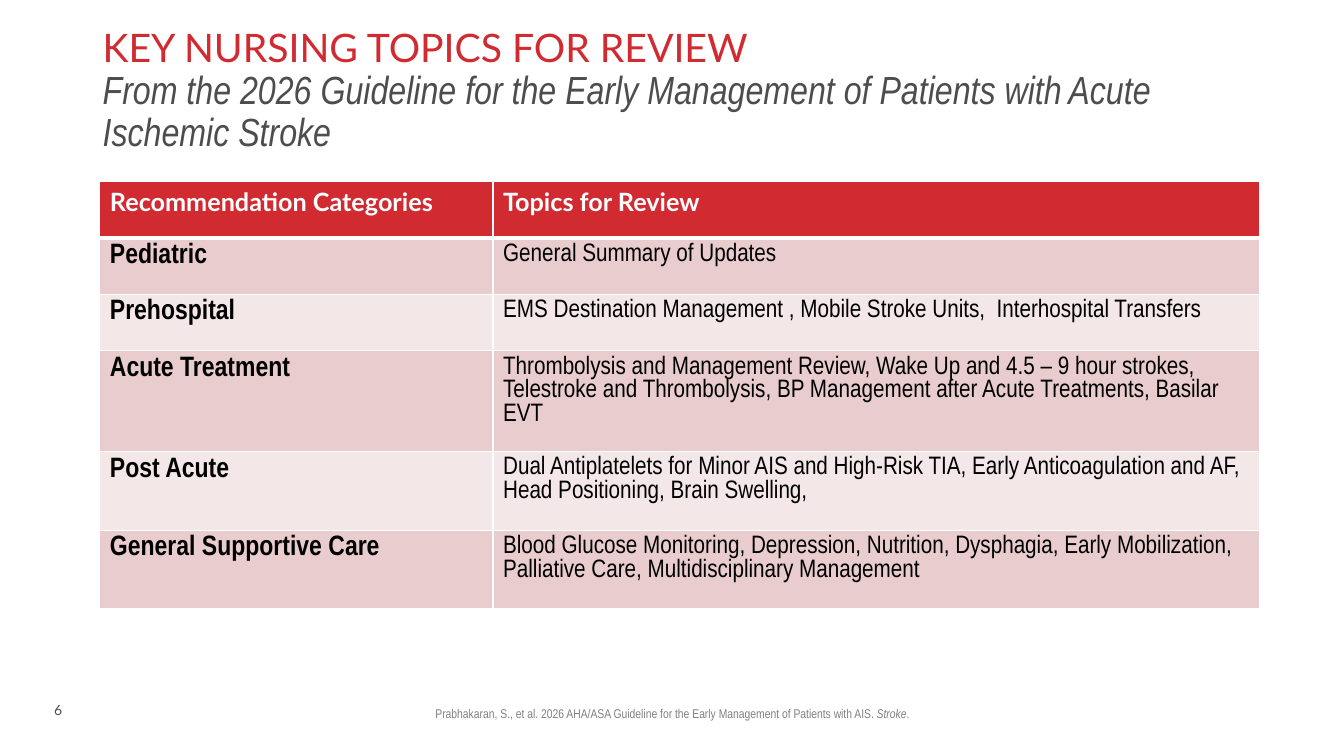
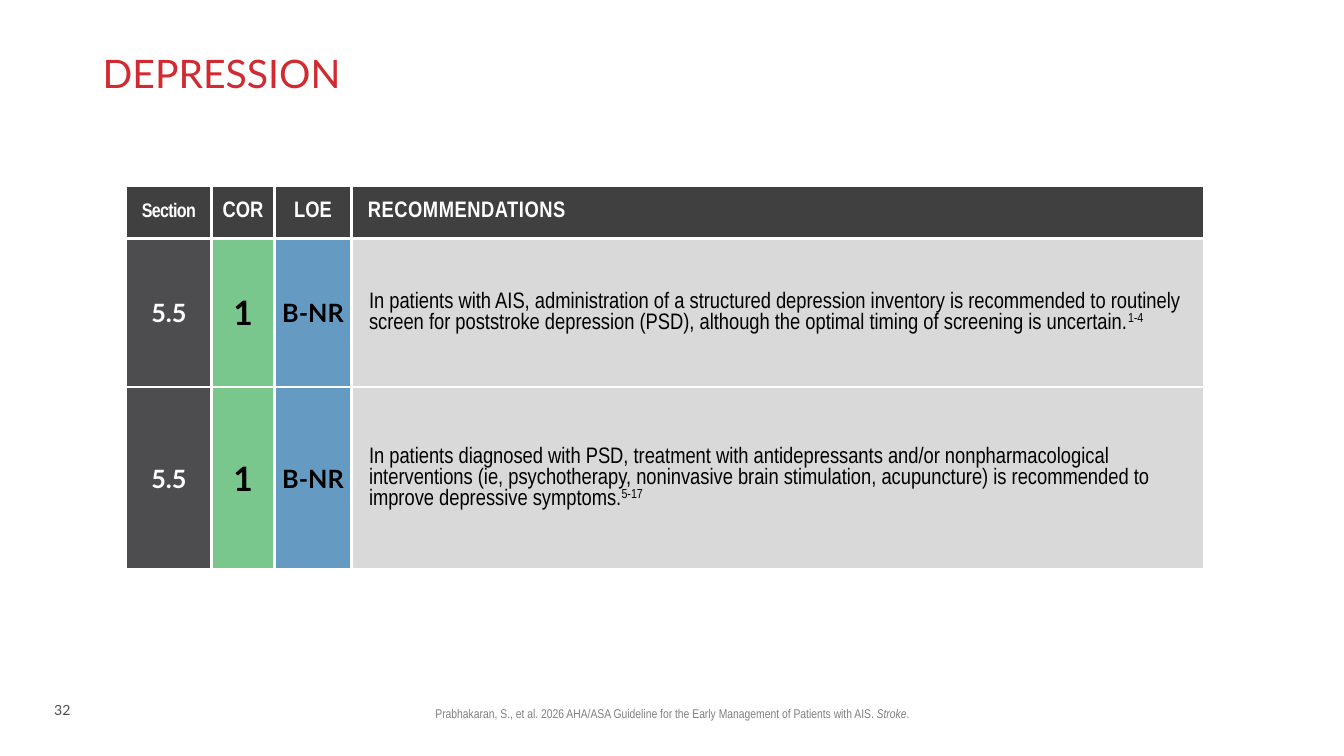
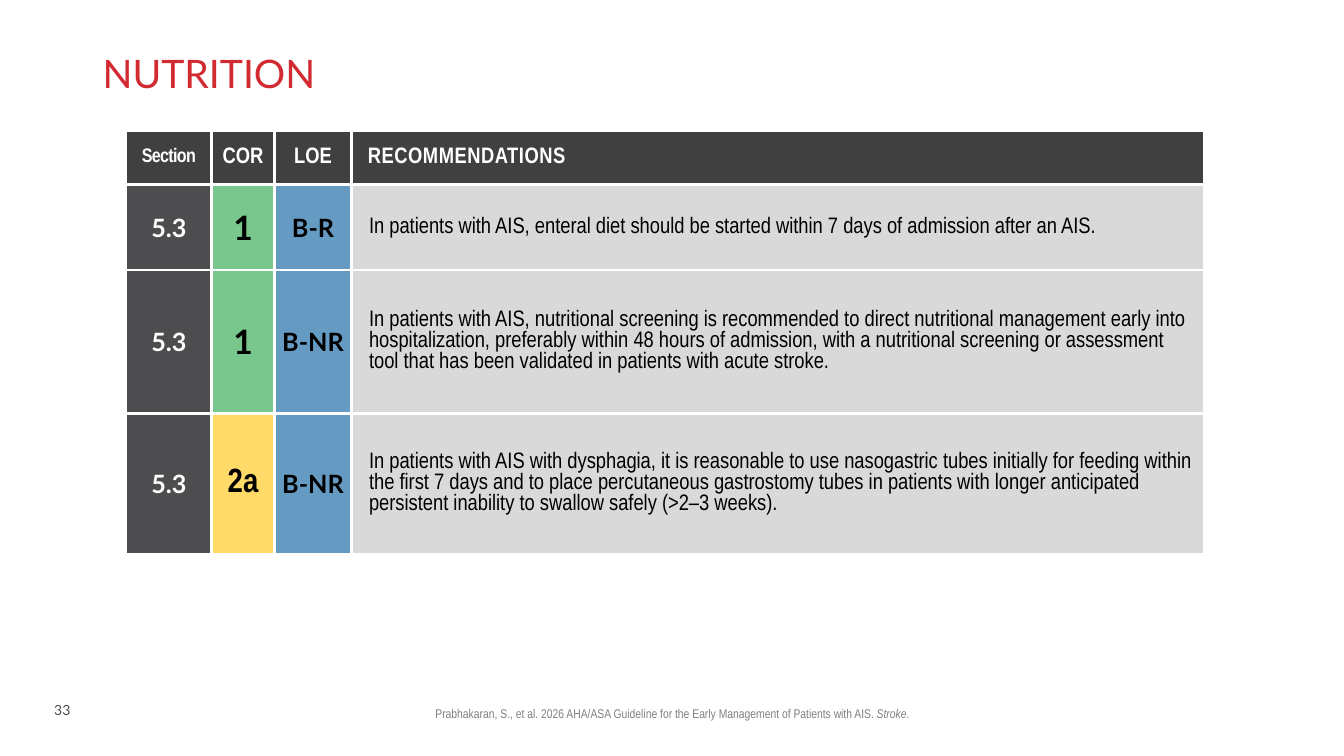
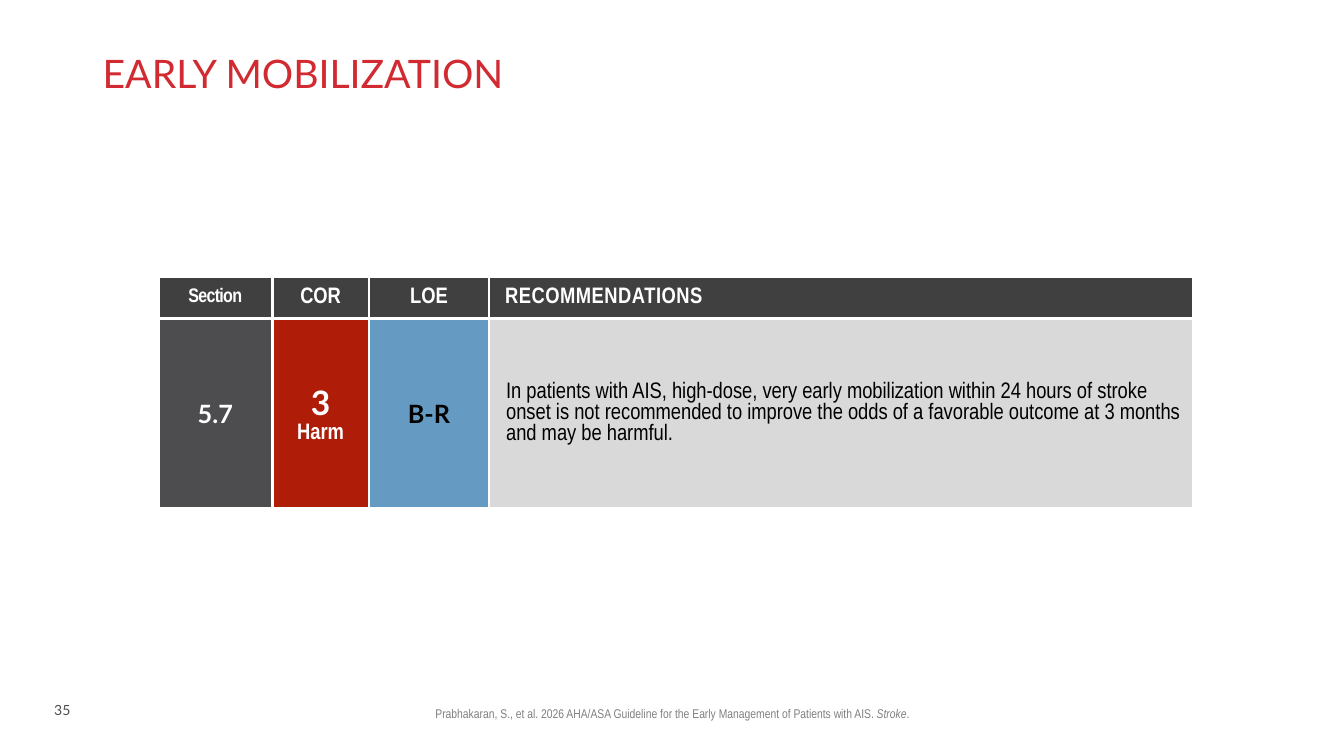
from itertools import product

from lxml.etree import SubElement
from pptx import Presentation
from pptx.dml.color import RGBColor
from pptx.enum.text import MSO_ANCHOR, PP_ALIGN
from pptx.oxml.ns import qn
from pptx.util import Inches, Pt

# Shared look
COLORS = {
    "white": "FFFFFF", "black": "000000", "red": "D12A31", "slate": "4D4D4F",
    "footer": "808080", "header": "404040", "panel": "D9D9D9", "rose": "E9CCCD",
    "blush": "F4E7E8", "green": "79C78D", "yellow": "FFDA68", "harm": "AF1C08", "blue": "659BC2",
}
NARROW, LATO = "Arial Narrow", "Lato"
STYLES = {
    "title": dict(name=LATO, size=Pt(28), color="red"),
    "subtitle": dict(name=NARROW, size=Pt(28), color="slate", italic=True),
    "number": dict(name=LATO, size=Pt(10), color="slate"),
    "citation": dict(name=NARROW, size=Pt(9), color="footer"),
    "journal": dict(name=NARROW, size=Pt(9), color="footer", italic=True),
    "topic head": dict(name=LATO, size=Pt(18), color="white", bold=True),
    "category": dict(name=NARROW, size=Pt(20), color="black", bold=True),
    "topics": dict(name=NARROW, size=Pt(18), color="black"),
    "section head": dict(name=NARROW, size=Pt(14), color="white", bold=True, spc=-50),
    "grade head": dict(name=NARROW, size=Pt(16), color="white", bold=True),
    "text head": dict(name=NARROW, size=Pt(16), color="white", bold=True, spc=40),
    "section": dict(name=LATO, size=Pt(18), color="white", bold=True),
    "class": dict(name=LATO, size=Pt(24), color="black", bold=True),
    "class narrow": dict(name=NARROW, size=Pt(24), color="black", bold=True),
    "class harm": dict(name=LATO, size=Pt(24), color="white", bold=True),
    "harm": dict(name=NARROW, size=Pt(16), color="white", bold=True),
    "level": dict(name=LATO, size=Pt(18), color="black", bold=True),
    "advice": dict(name=NARROW, size=Pt(16), color="black"),
    "reference": dict(name=NARROW, size=Pt(16), color="black", baseline=30000),
}
CITATION = [
    ("citation", "Prabhakaran, S., et al. 2026 AHA/ASA Guideline for the Early Management of Patients with AIS. "),
    ("journal", "Stroke"),
    ("citation", "."),
]
# Class of recommendation: spans and fill
CLASSES = {
    "1": ([("class", "1")], "green"),
    "2a": ([("class narrow", "2a")], "yellow"),
    "3": ([("class harm", "3\n"), ("harm", "Harm")], "harm"),
}

# Boxes are left, top, width, height in percent of the slide
NUMBER_BOX = (3.3, 92.13, 2.93, 3.6)
CITATION_BOX = (17.7, 92.67, 64.67, 3.33)
TITLE_BOX = (6.9, 5.33, 90.55, 8.13)
GRADE_COLUMNS = (0.85, 0.62, 0.77, 8.45)

# Column and row values are proportions of the table
PAGES = [
    dict(
        number="6",
        title=[("title", "KEY NURSING TOPICS FOR REVIEW\n"),
               ("subtitle", "From the 2026 Guideline for the Early Management of Patients with Acute Ischemic Stroke")],
        title_box=(6.9, 2.4, 86.27, 18.8),
        table_box=(7.43, 24, 86.27, 53.6),
        columns=(3.9, 7.6), rows=(0.56, 0.56, 0.56, 0.78, 0.78, 0.78),
        topics=[
            ("Pediatric", "General Summary of Updates"),
            ("Prehospital", "EMS Destination Management , Mobile Stroke Units,  Interhospital Transfers"),
            ("Acute Treatment", "Thrombolysis and Management Review, Wake Up and 4.5 – 9 hour strokes, "
             "Telestroke and Thrombolysis, BP Management after Acute Treatments, Basilar EVT"),
            ("Post Acute", "Dual Antiplatelets for Minor AIS and High-Risk TIA, Early Anticoagulation and AF, "
             "Head Positioning, Brain Swelling,"),
            ("General Supportive Care", "Blood Glucose Monitoring, Depression, Nutrition, Dysphagia, "
             "Early Mobilization, Palliative Care, Multidisciplinary Management"),
        ],
    ),
    dict(
        number="32", title=[("title", "DEPRESSION")], title_box=TITLE_BOX,
        table_box=(9.38, 24.53, 80.2, 50.8),
        columns=GRADE_COLUMNS, rows=(0.53, 1.47, 1.81),
        grades=[
            ("5.5", "1", "B-NR", "In patients with AIS, administration of a structured depression inventory is "
             "recommended to routinely screen for poststroke depression (PSD), although the optimal timing of "
             "screening is uncertain.", "1-4"),
            ("5.5", "1", "B-NR", "In patients diagnosed with PSD, treatment with antidepressants and/or "
             "nonpharmacological interventions (ie, psychotherapy, noninvasive brain stimulation, acupuncture) "
             "is recommended to improve depressive symptoms.", "5-17"),
        ],
    ),
    dict(
        number="33", title=[("title", "NUTRITION")], title_box=TITLE_BOX,
        table_box=(9.38, 17.33, 80.2, 56),
        columns=GRADE_COLUMNS, rows=(0.53, 0.85, 1.42, 1.4),
        grades=[
            ("5.3", "1", "B-R", "In patients with AIS, enteral diet should be started within 7 days of "
             "admission after an AIS.", ""),
            ("5.3", "1", "B-NR", "In patients with AIS, nutritional screening is recommended to direct "
             "nutritional management early into hospitalization, preferably within 48 hours of admission, with "
             "a nutritional screening or assessment tool that has been validated in patients with acute "
             "stroke.", ""),
            ("5.3", "2a", "B-NR", "In patients with AIS with dysphagia, it is reasonable to use nasogastric "
             "tubes initially for feeding within the first 7 days and to place percutaneous gastrostomy tubes "
             "in patients with longer anticipated persistent inability to swallow safely (>2–3 weeks).", ""),
        ],
    ),
    dict(
        number="35", title=[("title", "EARLY MOBILIZATION")], title_box=TITLE_BOX,
        table_box=(11.78, 36.53, 77.04, 30.67),
        columns=(1.13, 0.96, 1.19, 6.99), rows=(0.42, 1.88),
        grades=[
            ("5.7", "3", "B-R", "In patients with AIS, high-dose, very early mobilization within 24 hours of "
             "stroke onset is not recommended to improve the odds of a favorable outcome at 3 months and may "
             "be harmful.", ""),
        ],
    ),
]

deck = Presentation()
deck.slide_width, deck.slide_height = Inches(13.33), Inches(7.5)


def place(box):
    sides = (deck.slide_width, deck.slide_height) * 2
    return [round(side * share / 100) for side, share in zip(sides, box)]


def write(para, spans):
    for style, text in spans:
        span = para.add_run()
        span.text = text.rstrip("\n")
        for key, value in STYLES[style].items():
            if key == "color":
                span.font.color.rgb = RGBColor.from_string(COLORS[value])
            elif key in ("spc", "baseline"):
                span.font._element.set(key, str(value))
            else:
                setattr(span.font, key, value)
        if text.endswith("\n"):
            para.add_line_break()


for content in PAGES:
    page = deck.slides.add_slide(deck.slide_layouts[6])

    # Slide number, citation and title
    for box, spans, align, anchor, spacing in [
        (NUMBER_BOX, [("number", content["number"])], PP_ALIGN.LEFT, MSO_ANCHOR.TOP, 1.0),
        (CITATION_BOX, CITATION, PP_ALIGN.CENTER, MSO_ANCHOR.TOP, 1.0),
        (content["title_box"], content["title"], PP_ALIGN.LEFT, MSO_ANCHOR.BOTTOM, 0.9),
    ]:
        frame = page.shapes.add_textbox(*place(box)).text_frame
        frame.word_wrap, frame.vertical_anchor = True, anchor
        para = frame.paragraphs[0]
        para.alignment, para.line_spacing = align, spacing
        write(para, spans)

    # Table content: spans and fill for each cell
    graded = "grades" in content
    if graded:
        cells = [[([(style, text)], "header") for style, text in [
            ("section head", "Section"), ("grade head", "COR"),
            ("grade head", "LOE"), ("text head", "RECOMMENDATIONS")]]]
        for section, grade, level, advice, reference in content["grades"]:
            spans = [("advice", advice)] + ([("reference", reference)] if reference else [])
            cells.append([([("section", section)], "slate"), CLASSES[grade],
                          ([("level", level)], "blue"), (spans, "panel")])
    else:
        cells = [[([("topic head", text)], "red") for text in ("Recommendation Categories", "Topics for Review")]]
        for index, (category, topics) in enumerate(content["topics"]):
            fill = ("rose", "blush")[index % 2]
            cells.append([([("category", category)], fill), ([("topics", topics)], fill)])

    # Table grid
    columns, rows = content["columns"], content["rows"]
    left, top, width, height = place(content["table_box"])
    table = page.shapes.add_table(len(rows), len(columns), left, top, width, height).table
    table.first_row = table.horz_banding = False
    for column, share in zip(table.columns, columns):
        column.width = round(width * share / sum(columns))
    for row, share in zip(table.rows, rows):
        row.height = round(height * share / sum(rows))

    # Cell borders, fill and text
    for row, column in product(range(len(rows)), range(len(columns))):
        cell = table.cell(row, column)
        spans, fill = cells[row][column]
        for side in ("lnL", "lnR", "lnT", "lnB"):
            below_header = (row, side) in ((0, "lnB"), (1, "lnT"))
            weight = 2.25 if graded else 3 if below_header else 1
            border = SubElement(cell._tc.get_or_add_tcPr(), qn("a:" + side), w=str(Pt(weight)))
            SubElement(SubElement(border, qn("a:solidFill")), qn("a:srgbClr"), val=COLORS["white"])
        cell.fill.solid()
        cell.fill.fore_color.rgb = RGBColor.from_string(COLORS[fill])
        para = cell.text_frame.paragraphs[0]
        if graded:
            cell.vertical_anchor = MSO_ANCHOR.MIDDLE
            if row:
                cell.margin_left = cell.margin_right = Inches(0.05)
            if column < len(columns) - 1:
                para.alignment = PP_ALIGN.CENTER
            else:
                para._p.get_or_add_pPr().set("marL", str(Inches(0.12 if row else 0.06)))
                para.space_after = Pt(6 if row else 0)
        write(para, spans)

deck.save("out.pptx")
